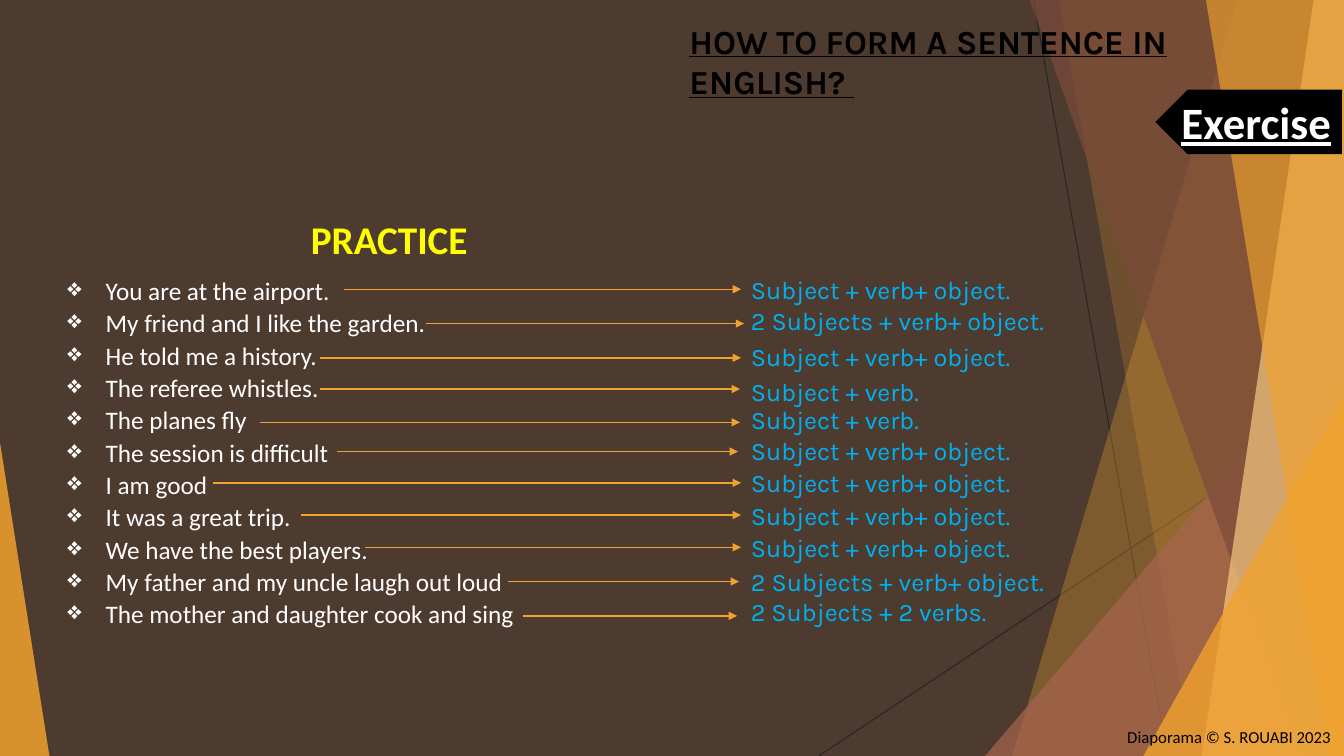
from typing import NamedTuple

from lxml import etree
from pptx import Presentation
from pptx import util as u
from pptx.dml.color import RGBColor
from pptx.enum import shapes, text
from pptx.oxml.ns import qn

COLORS = {
    "background": "4E3B30", "hairline": "262626", "amber": "F0A22E",
    "clay": "A5644E", "brown": "7C4B3B", "sand": "F6C782",
    "black": "000000", "white": "FFFFFF", "yellow": "FFFF00", "blue": "00B0F0",
}
WIDTH, HEIGHT = 13.33, 7.5
TOP = -0.01
ANSWER_LEFT = 7.35


class Band(NamedTuple):
    """Strip running to the right edge; top_x and bottom_x set its slanted side."""
    top_x: float
    bottom_x: float
    color: str
    alpha: int


class Triangle(NamedTuple):
    left: float
    top: float
    width: float
    height: float
    apex: float
    color: str
    alpha: int


class Item(NamedTuple):
    sentence: str
    answer: str
    answer_top: float
    arrow_start: float
    arrow_end: float
    arrow_y: float


DECORATIONS = [
    Band(12.28, 10.04, "amber", 30),
    Band(10.5, 11.83, "amber", 20),
    Triangle(9.77, 3.33, 3.56, 4.17, 1, "clay", 72),
    Band(10.21, 12.91, "brown", 70),
    Band(13.03, 11.92, "sand", 70),
    Band(11.96, 13.18, "amber", 65),
    Triangle(11.34, 3.93, 1.99, 3.57, 1, "amber", 80),
    Triangle(0, 4.39, 0.49, 3.11, 0, "amber", 85),
]
SVO = "Subject + verb+ object."
SV = "Subject + verb."
SSVO = "2 Subjects + verb+ object."
SSVV = "2 Subjects + 2 verbs."
ANSWER_WIDTHS = {SVO: 2.88, SV: 1.94, SSVO: 3.19, SSVV: 2.56}
ITEMS = [
    Item("You are at the airport.", SVO, 2.67, 3.41, 7.35, 2.87),
    Item("My friend and I like the garden.", SSVO, 2.98, 4.23, 7.38, 3.21),
    Item("He told me a history.", SVO, 3.34, 3.17, 7.35, 3.55),
    Item("The referee whistles.", SV, 3.68, 3.17, 7.34, 3.86),
    Item("The planes fly", SV, 3.96, 2.58, 7.34, 4.19),
    Item("The session is difficult", SVO, 4.27, 3.34, 7.32, 4.48),
    Item("I am good", SVO, 4.59, 2.11, 7.35, 4.79),
    Item("It was a great trip.", SVO, 4.91, 2.99, 7.35, 5.11),
    Item("We have the best players.", SVO, 5.23, 3.62, 7.35, 5.43),
    Item("My father and my uncle laugh out loud", SSVO, 5.57, 5.04, 7.33, 5.77),
    Item("The mother and daughter cook and sing", SSVV, 5.87, 5.19, 7.31, 6.11),
]


def rgb(name: str) -> RGBColor:
    return RGBColor.from_string(COLORS[name])


def paint(sp, color: str, alpha: int = 100) -> None:
    """Fill a shape without outline or shadow; alpha is opacity in percent."""
    sp.shadow.inherit = False
    sp.line.fill.background()
    sp.fill.solid()
    sp.fill.fore_color.rgb = rgb(color)
    if alpha < 100:
        clr = sp._element.spPr.find(qn("a:solidFill"))[0]
        etree.SubElement(clr, qn("a:alpha"), val=str(alpha * 1000))


def add_decoration(slide, item: Band | Triangle) -> None:
    if isinstance(item, Band):
        corners = [(item.top_x, TOP), (WIDTH, TOP), (WIDTH, HEIGHT), (item.bottom_x, HEIGHT)]
        points = [(u.Inches(x), u.Inches(y)) for x, y in corners]
        builder = slide.shapes.build_freeform(*points[0])
        builder.add_line_segments(points[1:], close=True)
        sp = builder.convert_to_shape()
    else:
        box = [u.Inches(v) for v in item[:4]]
        sp = slide.shapes.add_shape(shapes.MSO_SHAPE.ISOSCELES_TRIANGLE, *box)
        sp.adjustments[0] = item.apex
    paint(sp, item.color, item.alpha)


def add_line(slide, start: tuple[float, float], end: tuple[float, float],
             color: str, width: float, arrow: bool = False) -> None:
    ends = [u.Inches(v) for v in (*start, *end)]
    line = slide.shapes.add_connector(shapes.MSO_CONNECTOR.STRAIGHT, *ends)
    line.line.color.rgb = rgb(color)
    line.line.width = u.Pt(width)
    if arrow:
        etree.SubElement(line.line._get_or_add_ln(), qn("a:tailEnd"), type="triangle")
    etree.SubElement(line._element.spPr, qn("a:effectLst"))


def add_box(slide, left: float, top: float, width: float, height: float,
            wrap: bool = True):
    """Add an empty text box and return its text frame."""
    tf = slide.shapes.add_textbox(*(u.Inches(v) for v in (left, top, width, height))).text_frame
    tf.word_wrap = wrap
    tf.auto_size = text.MSO_AUTO_SIZE.SHAPE_TO_FIT_TEXT
    return tf


def write(p, words: str, *, size: float, color: str, font: str = "Calibri",
          bold: bool = False, underline: bool = False,
          align=text.PP_ALIGN.LEFT, spacing: float = 1.0, after: float = 0,
          bullet: str = "") -> None:
    p.alignment = align
    p.line_spacing = spacing
    p.space_after = u.Pt(after)
    if bullet:
        pPr = p._p.get_or_add_pPr()
        pPr.set("marL", str(u.Inches(0.38)))
        pPr.set("indent", str(u.Inches(-0.38)))
        etree.SubElement(pPr, qn("a:buFont"), typeface="OpenSymbol")
        etree.SubElement(pPr, qn("a:buChar"), char=bullet)
    r = p.add_run()
    r.text = words
    r.font.name = font
    r.font.size = u.Pt(size)
    r.font.bold = bold
    r.font.underline = underline
    r.font.color.rgb = rgb(color)


def add_practice(slide) -> None:
    tf = add_box(slide, 0.57, 2.05, 6.67, 4.28)
    write(tf.paragraphs[0], "PRACTICE ", size=28, color="yellow", bold=True,
          align=text.PP_ALIGN.CENTER, spacing=1.07, after=8)
    for item in ITEMS:
        write(tf.add_paragraph(), item.sentence, size=18, color="white",
              spacing=1.07, after=8 if item is ITEMS[-1] else 0, bullet="❖")


def add_exercise_tag(slide) -> None:
    box = [u.Inches(v) for v in (11.46, 0.89, 1.85, 0.64)]
    sp = slide.shapes.add_shape(shapes.MSO_SHAPE.PENTAGON, *box)
    sp._element.spPr.find(qn("a:xfrm")).set("flipH", "1")
    paint(sp, "black")
    tf = sp.text_frame
    tf.word_wrap = False
    tf.vertical_anchor = text.MSO_ANCHOR.TOP
    write(tf.paragraphs[0], "Exercise", size=32, color="white", bold=True, underline=True)


def main() -> None:
    prs = Presentation()
    prs.slide_width, prs.slide_height = u.Inches(WIDTH), u.Inches(HEIGHT)
    slide = prs.slides.add_slide(prs.slide_layouts[6])
    slide.background.fill.solid()
    slide.background.fill.fore_color.rgb = rgb("background")

    add_line(slide, (10.25, 0), (11.58, HEIGHT), "hairline", 0.75)
    add_line(slide, (WIDTH, 4.03), (8.12, HEIGHT), "hairline", 0.75)
    for decoration in DECORATIONS:
        add_decoration(slide, decoration)

    credit = add_box(slide, 10.61, 7.14, 2.69, 0.33)
    credit.auto_size = text.MSO_AUTO_SIZE.NONE
    credit.vertical_anchor = text.MSO_ANCHOR.MIDDLE
    write(credit.paragraphs[0], "Diaporama © S. ROUABI 2023", size=12, color="black",
          align=text.PP_ALIGN.RIGHT)
    title = add_box(slide, 6.74, 0.16, 6.56, 0.5)
    write(title.paragraphs[0], "HOW TO FORM A SENTENCE IN ENGLISH? ", size=24,
          color="black", font="Karla", bold=True, underline=True)
    add_practice(slide)
    add_exercise_tag(slide)

    for item in ITEMS:
        tf = add_box(slide, ANSWER_LEFT, item.answer_top, ANSWER_WIDTHS[item.answer], 0.4,
                     wrap=False)
        write(tf.paragraphs[0], item.answer, size=18, color="blue", font="Karla")
    for item in ITEMS:
        add_line(slide, (item.arrow_start, item.arrow_y), (item.arrow_end, item.arrow_y),
                 "amber", 1, arrow=True)
    prs.save("out.pptx")


if __name__ == "__main__":
    main()
